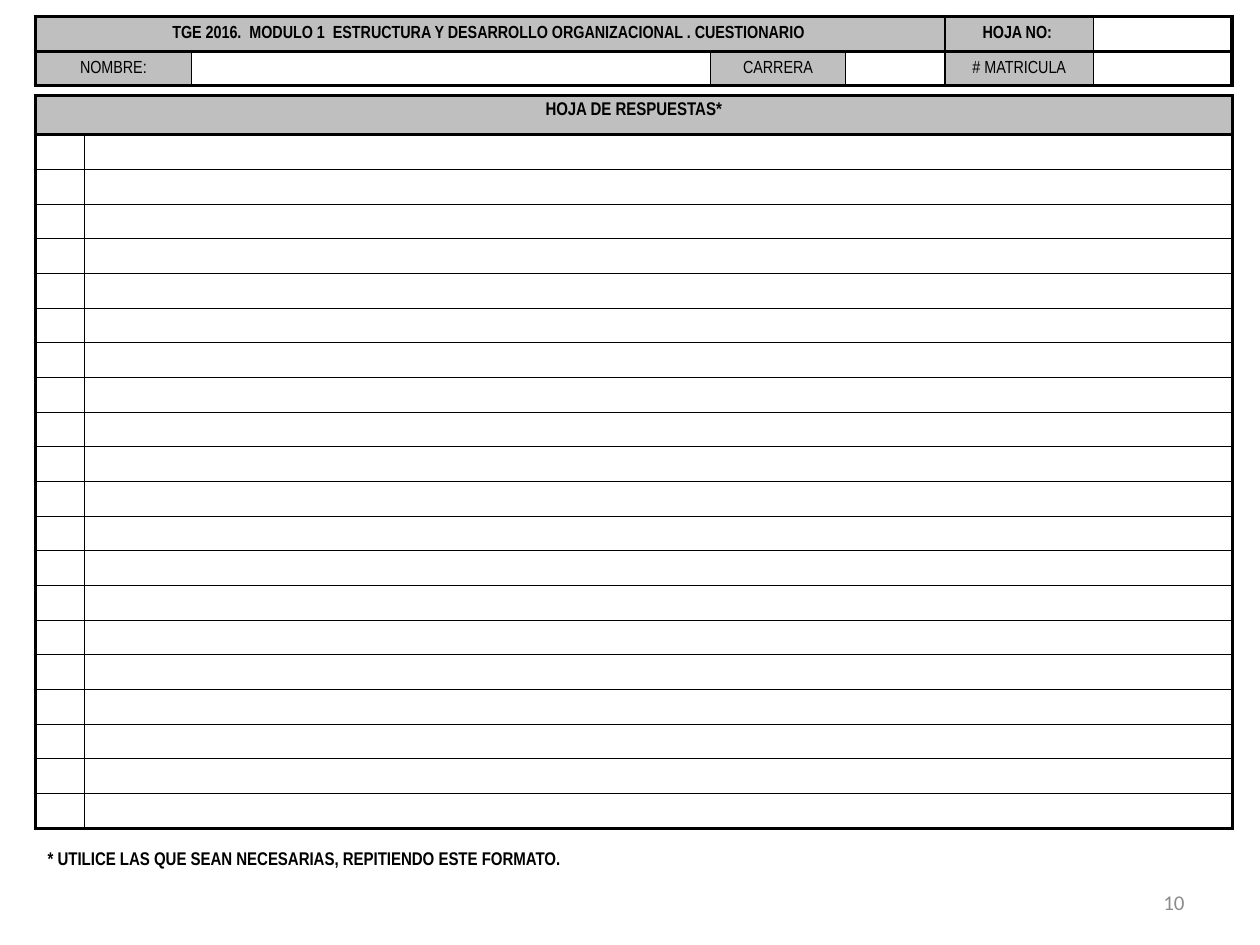
from dataclasses import dataclass

from lxml import etree
from pptx import Presentation
from pptx.dml.color import RGBColor
from pptx.enum.text import MSO_ANCHOR, PP_ALIGN
from pptx.oxml.ns import qn
from pptx.util import Inches, Pt

LEFT, CENTER, RIGHT = PP_ALIGN.LEFT, PP_ALIGN.CENTER, PP_ALIGN.RIGHT
TOP, MIDDLE = MSO_ANCHOR.TOP, MSO_ANCHOR.MIDDLE


@dataclass(frozen=True)
class Theme:
    ink: str = "000000"
    page: str = "FFFFFF"
    label: str = "BFBFBF"
    muted: str = "8C8C8C"
    form_font: str = "Arial Narrow"
    number_font: str = "Calibri"
    form_size: float = 10
    heading_size: float = 10.5
    number_size: float = 12
    heavy: float = 2.25
    column_rule: float = 1
    row_rule: float = 0.75


@dataclass(frozen=True)
class Style:
    size: float
    bold: bool = False
    align: PP_ALIGN = CENTER
    anchor: MSO_ANCHOR = MIDDLE
    font: str = Theme.form_font
    color: str = Theme.ink


@dataclass(frozen=True)
class Label:
    row: int
    column: int
    text: str
    style: Style
    span: int = 1


@dataclass(frozen=True)
class Grid:
    top: float
    columns: list[float]
    rows: list[float]
    row_rule: float
    labels: list[Label]


THEME = Theme()
SLIDE_WIDTH, SLIDE_HEIGHT = 10, 7.5
MARGIN = 0.28
ANSWER_ROWS = 20
ANSWER_HEIGHT = 5.51 / ANSWER_ROWS

PLAIN = Style(THEME.form_size)
BOLD = Style(THEME.form_size, bold=True)
HEADING = Style(THEME.heading_size, bold=True, anchor=TOP)
FOOTNOTE = Style(THEME.heading_size, bold=True, align=LEFT, anchor=TOP)
PAGE_NUMBER = Style(THEME.number_size, align=RIGHT,
                    font=THEME.number_font, color=THEME.muted)

STUDENT_GRID = Grid(
    top=0.13,
    columns=[1.24, 4.12, 1.07, 0.79, 1.18, 1.1],
    rows=[0.28, 0.26],
    row_rule=THEME.heavy,
    labels=[
        Label(0, 0, "TGE 2016.  MODULO 1  ESTRUCTURA Y DESARROLLO "
                    "ORGANIZACIONAL . CUESTIONARIO ", BOLD, span=4),
        Label(0, 4, "HOJA NO: ", BOLD),
        Label(1, 0, "NOMBRE:", PLAIN),
        Label(1, 2, "CARRERA", PLAIN),
        Label(1, 4, "# MATRICULA", PLAIN),
    ],
)
ANSWER_GRID = Grid(
    top=0.76,
    columns=[0.39, 9.11],
    rows=[0.31] + [ANSWER_HEIGHT] * ANSWER_ROWS,
    row_rule=THEME.row_rule,
    labels=[Label(0, 0, "HOJA DE RESPUESTAS*", HEADING, span=2)],
)


def format_paragraph(paragraph, style: Style) -> None:
    paragraph.alignment = style.align
    paragraph.font.name = style.font
    paragraph.font.size = Pt(style.size)
    paragraph.font.bold = style.bold
    paragraph.font.color.rgb = RGBColor.from_string(style.color)


def set_borders(cell, widths: dict[str, float]) -> None:
    """Draw the given sides, keyed L, R, T, B in schema order."""
    properties = cell._tc.get_or_add_tcPr()
    for index, (side, width) in enumerate(widths.items()):
        line = etree.Element(qn(f"a:ln{side}"), w=str(Pt(width)))
        fill = etree.SubElement(line, qn("a:solidFill"))
        etree.SubElement(fill, qn("a:srgbClr"), val=THEME.ink)
        properties.insert(index, line)


def border_widths(grid: Grid, row: int, first: int, last: int) -> dict[str, float]:
    """Heavy frame and header line, lighter rules inside."""
    final_row, final_column = len(grid.rows) - 1, len(grid.columns) - 1
    return {
        "L": THEME.heavy if first == 0 else THEME.column_rule,
        "R": THEME.heavy if last == final_column else THEME.column_rule,
        "T": THEME.heavy if row <= 1 else grid.row_rule,
        "B": THEME.heavy if row in (0, final_row) else grid.row_rule,
    }


def draw_grid(slide, grid: Grid) -> None:
    frame = slide.shapes.add_table(
        len(grid.rows), len(grid.columns), Inches(MARGIN), Inches(grid.top),
        Inches(sum(grid.columns)), Inches(sum(grid.rows)))
    table = frame.table
    table.first_row = table.horz_banding = False
    for column, width in zip(table.columns, grid.columns):
        column.width = Inches(width)
    for row, height in zip(table.rows, grid.rows):
        row.height = Inches(height)

    labels = {(label.row, label.column): label for label in grid.labels}
    for label in grid.labels:
        if label.span > 1:
            table.cell(label.row, label.column).merge(
                table.cell(label.row, label.column + label.span - 1))

    for row in range(len(grid.rows)):
        for column in range(len(grid.columns)):
            cell = table.cell(row, column)
            label = labels.get((row, column))
            span = label.span if label else 1
            widths = border_widths(grid, row, column, column + span - 1)
            if cell.is_spanned:
                widths = {side: widths[side] for side in "TB"}
            cell.fill.solid()
            cell.fill.fore_color.rgb = RGBColor.from_string(
                THEME.label if label or cell.is_spanned else THEME.page)
            set_borders(cell, widths)
            style = label.style if label else PLAIN
            cell.vertical_anchor = style.anchor
            if label:
                cell.text = label.text
            format_paragraph(cell.text_frame.paragraphs[0], style)


def add_text(slide, text: str, left: float, top: float, width: float,
             height: float, style: Style) -> None:
    """Place a text box by shares of the slide's size."""
    box = slide.shapes.add_textbox(
        Inches(left * SLIDE_WIDTH), Inches(top * SLIDE_HEIGHT),
        Inches(width * SLIDE_WIDTH), Inches(height * SLIDE_HEIGHT))
    box.text_frame.word_wrap = True
    box.text_frame.vertical_anchor = style.anchor
    box.text_frame.text = text
    format_paragraph(box.text_frame.paragraphs[0], style)


def main() -> None:
    presentation = Presentation()
    presentation.slide_width = Inches(SLIDE_WIDTH)
    presentation.slide_height = Inches(SLIDE_HEIGHT)
    blank_layout = presentation.slide_layouts[6]
    slide = presentation.slides.add_slide(blank_layout)

    # Page number
    add_text(slide, "10", 0.72, 0.93, 0.23, 0.05, PAGE_NUMBER)

    # Student details and answer sheet
    draw_grid(slide, STUDENT_GRID)
    draw_grid(slide, ANSWER_GRID)

    # Footnote
    add_text(slide, "* UTILICE LAS QUE SEAN NECESARIAS, REPITIENDO ESTE FORMATO.",
             MARGIN / SLIDE_WIDTH, 0.89, 0.93, 0.04, FOOTNOTE)

    presentation.save("out.pptx")


if __name__ == "__main__":
    main()
